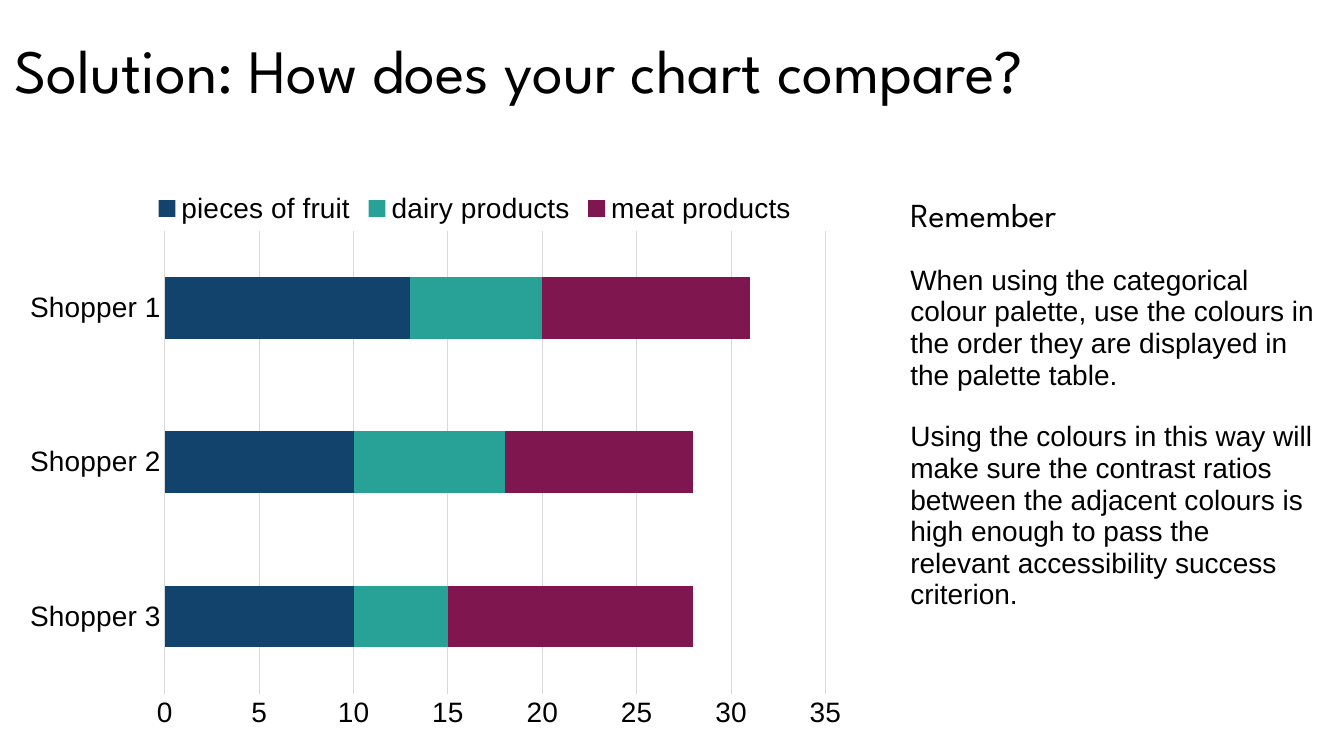
import pptx
import pptx.chart.data
import pptx.dml.color
import pptx.enum.chart
import pptx.enum.text
import pptx.oxml
import pptx.oxml.ns
import pptx.util
from pptx.util import Inches

BLACK, GRID = "000000", "D9D9D9"
HEADING_FONT, BODY_FONT = "League Spartan", "Arial"
SHOPPERS = ["Shopper 3", "Shopper 2", "Shopper 1"]
PURCHASES = [
    ("pieces of fruit", (10, 10, 13), "12436D"),
    ("dairy products", (5, 8, 7), "28A197"),
    ("meat products", (13, 10, 11), "801650"),
]
ADVICE = [
    "When using the categorical colour palette, use the colours in the order "
    "they are displayed in the palette table.",
    "Using the colours in this way will make sure the contrast ratios between "
    "the adjacent colours is high enough to pass the relevant "
    "accessibility success criterion.",
]


def rgb(value):
    return pptx.dml.color.RGBColor.from_string(value)


def style_font(font, size=20, name=BODY_FONT, color=BLACK):
    font.size = pptx.util.Pt(size)
    font.name = name
    font.bold = False
    font.color.rgb = rgb(color)


def write(paragraph, text, line_spacing=0.9, space_before=0, **font_format):
    paragraph.alignment = pptx.enum.text.PP_ALIGN.LEFT
    paragraph.line_spacing = line_spacing
    paragraph.space_before = pptx.util.Pt(space_before)
    run = paragraph.add_run()
    run.text = text
    style_font(run.font, **font_format)


def grey_line(line):
    line.color.rgb = rgb(GRID)
    line.width = pptx.util.Pt(0.75)


def set_layout(parent, successor_tags, target=None, **fractions):
    """Place a chart part by fractions of the chart area."""
    for old in parent.findall(pptx.oxml.ns.qn("c:layout")):
        parent.remove(old)
    rules = f'<c:layoutTarget val="{target}"/>' if target else ""
    rules += '<c:xMode val="edge"/><c:yMode val="edge"/>'
    rules += "".join(f'<c:{key} val="{value}"/>' for key, value in fractions.items())
    layout = pptx.oxml.parse_xml(
        f'<c:layout {pptx.oxml.ns.nsdecls("c")}>'
        f"<c:manualLayout>{rules}</c:manualLayout></c:layout>"
    )
    tags = [pptx.oxml.ns.qn(tag) for tag in successor_tags]
    next(child for child in parent if child.tag in tags).addprevious(layout)


def add_title(slide, text, left, top, width, height):
    title = slide.shapes.title
    title.left, title.top, title.width, title.height = left, top, width, height
    title.text_frame.vertical_anchor = pptx.enum.text.MSO_ANCHOR.MIDDLE
    write(title.text_frame.paragraphs[0], text, size=44, name=HEADING_FONT)


def add_shopper_chart(slide, left, top, width, height):
    purchases = pptx.chart.data.CategoryChartData()
    purchases.categories = SHOPPERS
    for name, counts, _ in PURCHASES:
        purchases.add_series(name, counts)
    chart = slide.shapes.add_chart(
        pptx.enum.chart.XL_CHART_TYPE.BAR_STACKED, left, top, width, height, purchases
    ).chart
    chart.has_title = False
    style_font(chart.font, size=10)

    bars = chart.plots[0]
    bars.gap_width, bars.overlap, bars.vary_by_categories = 150, 100, False
    for series, (_, _, color) in zip(bars.series, PURCHASES):
        series.format.fill.solid()
        series.format.fill.fore_color.rgb = rgb(color)

    for axis in (chart.category_axis, chart.value_axis):
        axis.major_tick_mark = pptx.enum.chart.XL_TICK_MARK.NONE
        axis.minor_tick_mark = pptx.enum.chart.XL_TICK_MARK.NONE
        style_font(axis.tick_labels.font)
    grey_line(chart.category_axis.format.line)
    counts_axis = chart.value_axis
    counts_axis.minimum_scale, counts_axis.maximum_scale = 0, 35
    counts_axis.major_unit = 5
    counts_axis.format.line.fill.background()
    grey_line(counts_axis.major_gridlines.format.line)

    chart.has_legend = True
    legend = chart.legend
    legend.position = pptx.enum.chart.XL_LEGEND_POSITION.TOP
    legend.include_in_layout = False
    style_font(legend.font)
    set_layout(legend._element, ["c:overlay"], x=0.22, y=0.05)
    set_layout(bars._element.getparent(), ["c:barChart"], target="inner",
               x=0.237, y=0.125, w=0.724, h=0.799)


def add_reminder(slide, left, top, width, height):
    frame = slide.shapes.add_textbox(left, top, width, height).text_frame
    frame.word_wrap = True
    write(frame.paragraphs[0], "Remember", size=24, name=HEADING_FONT)
    for advice in ADVICE:
        write(frame.add_paragraph(), advice, line_spacing=0.94, space_before=21.6)


def main():
    deck = pptx.Presentation()
    deck.slide_width, deck.slide_height = Inches(13.33), Inches(7.5)
    slide = deck.slides.add_slide(deck.slide_layouts[5])
    add_title(slide, "Solution: How does your chart compare?",
              Inches(0.04), Inches(0), Inches(13.29), Inches(1.45))
    add_shopper_chart(slide, Inches(-0.51), Inches(1.57), Inches(9.05), Inches(5.75))
    add_reminder(slide, Inches(8.93), Inches(1.92), Inches(4.21), Inches(5.4))
    deck.save("out.pptx")


if __name__ == "__main__":
    main()
